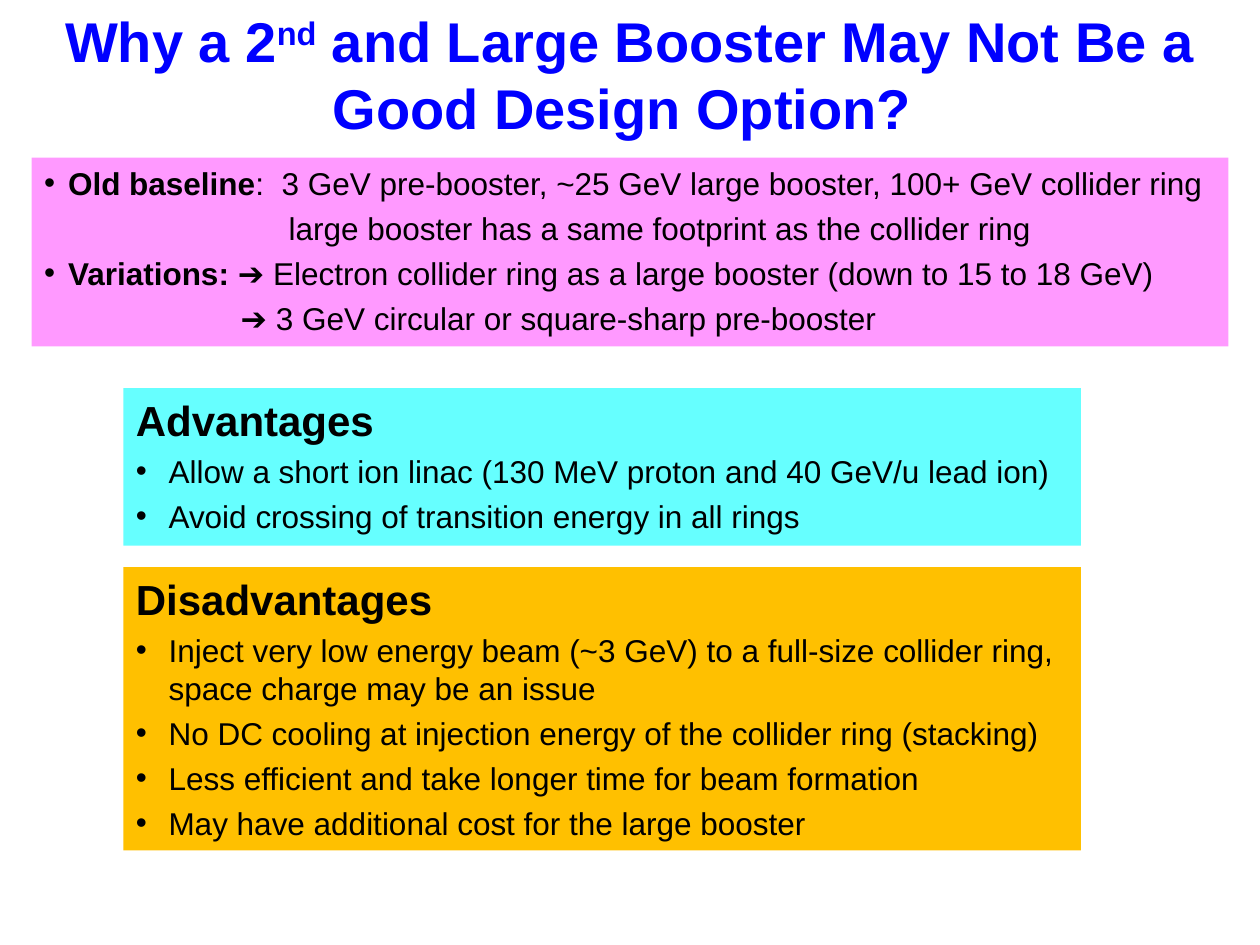
from lxml import etree
from pptx import Presentation
from pptx.dml.color import RGBColor
from pptx.enum.shapes import MSO_SHAPE
from pptx.enum.text import MSO_ANCHOR, MSO_AUTO_SIZE, PP_ALIGN
from pptx.oxml.ns import qn
from pptx.util import Inches, Pt

RECTANGLE = MSO_SHAPE.RECTANGLE
TOP, MIDDLE = MSO_ANCHOR.TOP, MSO_ANCHOR.MIDDLE
LEFT, CENTER = PP_ALIGN.LEFT, PP_ALIGN.CENTER
NO_AUTOFIT = MSO_AUTO_SIZE.NONE

BLUE = RGBColor(0x00, 0x00, 0xFF)
BLACK = RGBColor(0x00, 0x00, 0x00)
PINK = RGBColor(0xFF, 0x99, 0xFF)
CYAN = RGBColor(0x66, 0xFF, 0xFF)
AMBER = RGBColor(0xFF, 0xC0, 0x00)

TITLE_FORMAT = {"name": "Arial", "size": Pt(32), "bold": True}
HEADING_FORMAT = {"name": "Arial", "size": Pt(24), "bold": True}
TEXT_FORMAT = {"name": "Arial", "size": Pt(18), "bold": False}
LABEL_FORMAT = {**TEXT_FORMAT, "bold": True}

ADVANTAGES = [
    "Allow a short ion linac (130 MeV proton and 40 GeV/u lead ion)",
    "Avoid crossing of transition energy in all rings",
]
DISADVANTAGES = [
    "Inject very low energy beam (~3 GeV) to a full-size collider ring, "
    "space charge may be an issue",
    "No DC cooling at injection energy of the collider ring (stacking)",
    "Less efficient and take longer time for beam formation",
    "May have additional cost for the large booster",
]


def place(shape, box):
    """Move a shape to a box of left, top, width and height in inches."""
    for side, length in zip(("left", "top", "width", "height"), box):
        setattr(shape, side, Inches(length))


def prepare_frame(shape, anchor):
    """Give a shape's text frame wrapping, no autofit and an anchor."""
    frame = shape.text_frame
    settings = {"word_wrap": True, "auto_size": NO_AUTOFIT, "vertical_anchor": anchor}
    for name, value in settings.items():
        setattr(frame, name, value)
    return frame


def add_run(paragraph, text, formats, color=BLACK):
    """Append a formatted run to a paragraph."""
    run = paragraph.add_run()
    run.text = text
    for name, value in formats.items():
        setattr(run.font, name, value)
    run.font.color.rgb = color
    return run


def add_line(frame, runs, margin=0, bullet=False):
    """Add a paragraph of runs, indented by a margin, hanging when bulleted."""
    is_first = not frame.paragraphs[0].runs
    paragraph = frame.paragraphs[0] if is_first else frame.add_paragraph()
    properties = paragraph._p.get_or_add_pPr()
    properties.set("marL", str(Inches(margin)))
    properties.set("indent", str(-Inches(margin) if bullet else 0))
    if bullet:
        etree.SubElement(properties, qn("a:buFont")).set("typeface", "Arial")
        etree.SubElement(properties, qn("a:buChar")).set("char", "•")
    else:
        etree.SubElement(properties, qn("a:buNone"))
    paragraph.alignment = LEFT
    paragraph.space_before = Pt(0 if is_first else 4.2)
    for text, formats in runs:
        add_run(paragraph, text, formats)


def fill_title(title, box):
    """Write the slide title with its raised ordinal."""
    place(title, box)
    paragraph = prepare_frame(title, MIDDLE).paragraphs[0]
    paragraph.alignment = CENTER
    add_run(paragraph, "Why a 2", TITLE_FORMAT, BLUE)
    ordinal = add_run(paragraph, "nd", TITLE_FORMAT, BLUE)
    ordinal._r.get_or_add_rPr().set("baseline", "30000")
    add_run(paragraph, " and Large Booster May Not Be a Good Design Option? ",
            TITLE_FORMAT, BLUE)


def fill_baseline(body, box):
    """Write the old baseline and its variations on a pink panel."""
    place(body, box)
    body.fill.solid()
    body.fill.fore_color.rgb = PINK
    frame = prepare_frame(body, TOP)
    add_line(frame, [
        ("Old baseline", LABEL_FORMAT),
        (":  3 GeV pre-booster, ~25 GeV large booster, 100+ GeV collider ring", TEXT_FORMAT),
    ], 0.19, bullet=True)
    add_line(frame, [
        ("large booster has a same footprint as the collider ring", TEXT_FORMAT),
    ], 1.94)
    add_line(frame, [
        ("Variations: ", LABEL_FORMAT),
        ("➔ Electron collider ring as a large booster (down to 15 to 18 GeV)", TEXT_FORMAT),
    ], 0.19, bullet=True)
    add_line(frame, [("➔ 3 GeV circular or square-sharp pre-booster", TEXT_FORMAT)], 1.56)


def add_panel(slide, box, color, heading, points):
    """Add a coloured panel with a heading and bulleted points."""
    panel = slide.shapes.add_shape(RECTANGLE, *map(Inches, box))
    panel.shadow.inherit = False
    panel.fill.solid()
    panel.fill.fore_color.rgb = color
    panel.line.fill.background()
    frame = prepare_frame(panel, TOP)
    add_line(frame, [(heading, HEADING_FORMAT)])
    for point in points:
        add_line(frame, [(point, TEXT_FORMAT)], 0.26, bullet=True)


def main():
    """Build the slide and save it."""
    presentation = Presentation()
    presentation.slide_width, presentation.slide_height = Inches(10), Inches(7.5)
    slide = presentation.slides.add_slide(presentation.slide_layouts[1])
    fill_title(slide.shapes.title, (0, 0, 10, 1.17))
    fill_baseline(slide.placeholders[1], (0.25, 1.25, 9.5, 1.5))
    add_panel(slide, (0.98, 3.08, 7.6, 1.25), CYAN, "Advantages", ADVANTAGES)
    add_panel(slide, (0.98, 4.5, 7.6, 2.25), AMBER, "Disadvantages", DISADVANTAGES)
    presentation.save("out.pptx")


if __name__ == "__main__":
    main()
